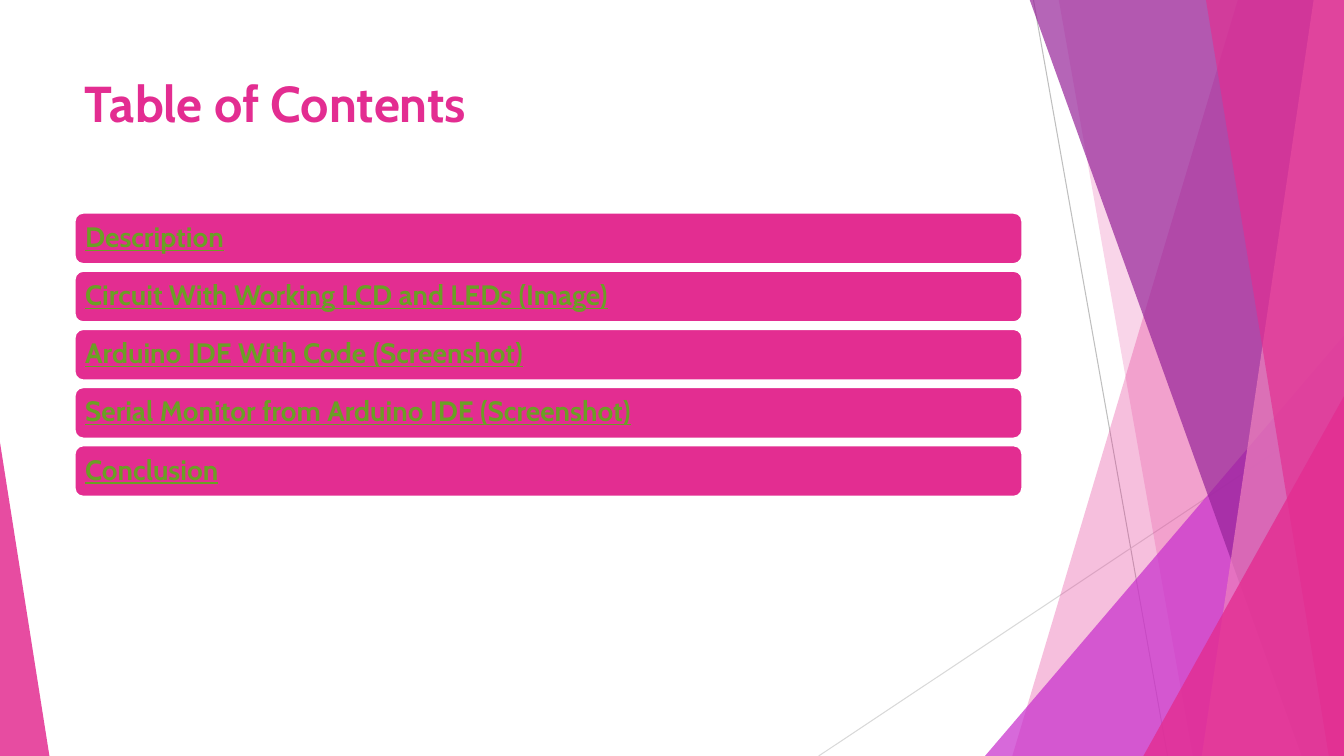
"""Build the Table of Contents slide with its faceted border."""
from dataclasses import dataclass

import lxml.etree
import pptx
import pptx.dml.color
import pptx.enum.shapes
import pptx.enum.text
import pptx.oxml.ns
import pptx.util

Inches = pptx.util.Inches
SHAPES = pptx.enum.shapes.MSO_SHAPE
WIDTH, HEIGHT = 13.33, 7.5
BLEED_TOP = -0.01
PINK = "E32D91"
LINK_GREEN = "6B9F25"
MARGIN, CONTENT_WIDTH = 0.74, 9.4
BAR_TOP, BAR_HEIGHT, BAR_PITCH = 2.11, 0.51, 0.577


@dataclass
class Ray:
    """A thin line across the border."""
    start: tuple[float, float]
    end: tuple[float, float]
    color: str


@dataclass
class Band:
    """A facet reaching the right edge, given by the ends of its left side."""
    top_x: float
    bottom_x: float
    color: str
    opacity: int


@dataclass
class Corner:
    """A triangle standing on the bottom edge."""
    left: float
    top: float
    width: float
    apex: float
    color: str
    opacity: int


RAYS = [
    Ray((10.25, 0), (11.58, HEIGHT), "BFBFBF"),
    Ray((WIDTH, 4.03), (8.12, HEIGHT), "D9D9D9"),
]
FACETS = [
    Band(12.28, 10.04, PINK, 30),
    Band(10.5, 11.83, PINK, 20),
    Corner(9.77, 3.33, 3.56, 1, "C830CC", 72),
    Band(10.21, 12.91, "962499", 70),
    Band(13.03, 11.92, "EE81BD", 70),
    Band(11.96, 13.18, PINK, 65),
    Corner(11.34, 3.93, 1.99, 1, PINK, 80),
    Corner(0, 4.39, 0.49, 0, PINK, 85),
]
TOPICS = [
    "Description",
    "Circuit With Working LCD and LEDs (Image)",
    "Arduino IDE With Code (Screenshot)",
    "Serial Monitor from Arduino IDE (Screenshot)",
    "Conclusion",
]


def set_color(target, color: str) -> None:
    """Give a font, or a solid fill or line, a hex colour."""
    target.color.rgb = pptx.dml.color.RGBColor.from_string(color)


def set_fill(shape, color: str, opacity: int = 100) -> None:
    """Fill a shape with a colour at a percentage of opacity."""
    shape.shadow.inherit = False
    shape.fill.solid()
    shape.fill.fore_color.rgb = pptx.dml.color.RGBColor.from_string(color)
    if opacity < 100:
        swatch = shape.fill._xPr.find(".//" + pptx.oxml.ns.qn("a:srgbClr"))
        alpha = lxml.etree.SubElement(swatch, pptx.oxml.ns.qn("a:alpha"))
        alpha.set("val", str(opacity * 1000))


def write_text(frame, text: str, *, size: float, color: str, anchor,
               underline: bool = False, line_spacing: float = 1.0) -> None:
    """Write one left-aligned bold paragraph."""
    frame.word_wrap = True
    frame.auto_size = pptx.enum.text.MSO_AUTO_SIZE.NONE
    frame.vertical_anchor = anchor
    paragraph = frame.paragraphs[0]
    paragraph.alignment = pptx.enum.text.PP_ALIGN.LEFT
    paragraph.line_spacing = line_spacing
    paragraph.space_before = pptx.util.Pt(0)
    run = paragraph.add_run()
    run.text = text
    run.font.name = "Cabin"
    run.font.size = pptx.util.Pt(size)
    run.font.bold = True
    run.font.underline = underline
    set_color(run.font, color)


def draw_ray(shapes, ray: Ray) -> None:
    """Draw a thin line without a shadow."""
    connector = shapes.add_connector(
        pptx.enum.shapes.MSO_CONNECTOR.STRAIGHT,
        *map(Inches, ray.start + ray.end))
    connector.line.width = pptx.util.Pt(0.75)
    set_color(connector.line, ray.color)
    lxml.etree.SubElement(connector._element.spPr, pptx.oxml.ns.qn("a:effectLst"))


def draw_facet(shapes, facet: Band | Corner) -> None:
    """Draw one translucent facet."""
    if isinstance(facet, Band):
        outline = [(WIDTH, BLEED_TOP), (WIDTH, HEIGHT), (facet.bottom_x, HEIGHT)]
        builder = shapes.build_freeform(Inches(facet.top_x), Inches(BLEED_TOP))
        builder.add_line_segments([(Inches(x), Inches(y)) for x, y in outline])
        shape = builder.convert_to_shape()
    else:
        shape = shapes.add_shape(
            SHAPES.ISOSCELES_TRIANGLE, Inches(facet.left), Inches(facet.top),
            Inches(facet.width), Inches(HEIGHT - facet.top))
        shape.adjustments[0] = facet.apex
    set_fill(shape, facet.color, facet.opacity)
    shape.line.fill.background()


def draw_topic(shapes, index: int, topic: str) -> None:
    """Draw one rounded bar holding a topic."""
    bar = shapes.add_shape(
        SHAPES.ROUNDED_RECTANGLE, Inches(MARGIN),
        Inches(BAR_TOP + index * BAR_PITCH), Inches(CONTENT_WIDTH), Inches(BAR_HEIGHT))
    set_fill(bar, PINK)
    bar.line.width = pptx.util.Pt(1.5)
    set_color(bar.line, "FFFFFF")
    frame = bar.text_frame
    frame.margin_left = frame.margin_right = Inches(0.08)
    frame.margin_top = frame.margin_bottom = Inches(0.08)
    write_text(frame, topic, size=20, color=LINK_GREEN, underline=True,
               line_spacing=0.9, anchor=pptx.enum.text.MSO_ANCHOR.MIDDLE)


def main() -> None:
    """Build and save the slide."""
    deck = pptx.Presentation()
    deck.slide_width, deck.slide_height = Inches(WIDTH), Inches(HEIGHT)
    slide = deck.slides.add_slide(deck.slide_layouts.get_by_name("Title Only"))
    for ray in RAYS:
        draw_ray(slide.shapes, ray)
    for facet in FACETS:
        draw_facet(slide.shapes, facet)
    heading = slide.shapes.title
    heading.left, heading.top = Inches(MARGIN), Inches(0.67)
    heading.width, heading.height = Inches(CONTENT_WIDTH), Inches(1.44)
    write_text(heading.text_frame, "Table of Contents", size=36, color=PINK,
               anchor=pptx.enum.text.MSO_ANCHOR.TOP)
    for index, topic in enumerate(TOPICS):
        draw_topic(slide.shapes, index, topic)
    deck.save("out.pptx")


if __name__ == "__main__":
    main()
